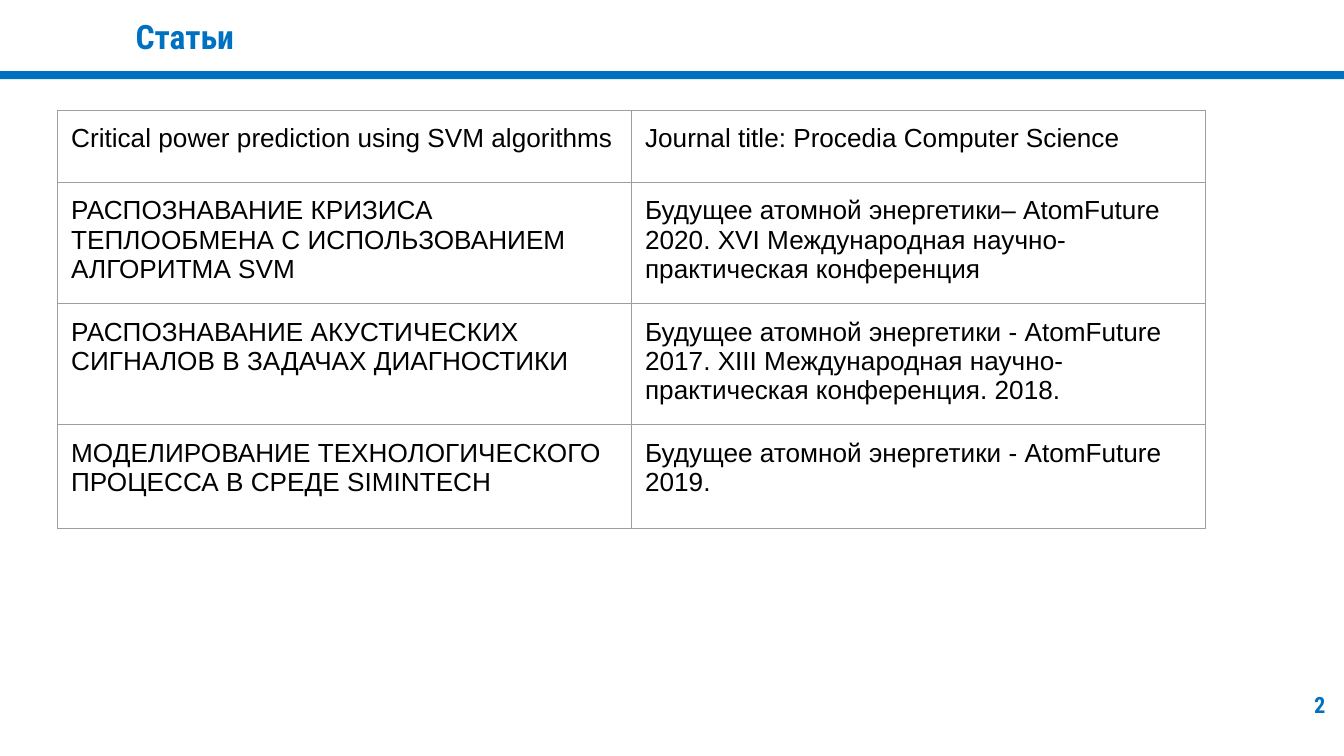
import pptx
import pptx.dml.color
import pptx.enum.shapes
import pptx.enum.text
import pptx.oxml
import pptx.oxml.ns
import pptx.util
from dataclasses import dataclass

Inches = pptx.util.Inches
Align = pptx.enum.text.PP_ALIGN
Anchor = pptx.enum.text.MSO_ANCHOR


@dataclass(frozen=True)
class Theme:
    accent: str = "0070C0"
    text: str = "000000"
    border: str = "9E9E9E"
    border_width: float = 0.75
    heading_font: str = "Roboto Condensed"
    body_font: str = "Arial"
    title_size: int = 18
    body_size: int = 14
    number_size: int = 12
    inset: float = 0.1


class SlideBuilder:
    def __init__(self, slide, theme):
        self.slide = slide
        self.theme = theme

    def add_run(self, paragraph, text, size, font, color, bold=False):
        run = paragraph.add_run()
        run.text = text
        run.font.size = pptx.util.Pt(size)
        run.font.name = font
        run.font.bold = bold
        run.font.color.rgb = pptx.dml.color.RGBColor.from_string(color)
        # The paragraph end keeps the run's size, so it does not stretch the line
        paragraph._p.append(pptx.oxml.parse_xml(
            f'<a:endParaRPr {pptx.oxml.ns.nsdecls("a")} sz="{size * 100}"/>'))

    def set_margins(self, holder):
        for side in ("left", "top", "right", "bottom"):
            setattr(holder, f"margin_{side}", Inches(self.theme.inset))

    def bar(self, left, top, width, height):
        shape = self.slide.shapes.add_shape(
            pptx.enum.shapes.MSO_SHAPE.RECTANGLE,
            Inches(left), Inches(top), Inches(width), Inches(height))
        shape.shadow.inherit = False
        shape.fill.solid()
        shape.fill.fore_color.rgb = pptx.dml.color.RGBColor.from_string(self.theme.accent)
        shape.line.fill.background()

    def heading(self, text, left, top, width, height, size, align=Align.LEFT):
        box = self.slide.shapes.add_textbox(
            Inches(left), Inches(top), Inches(width), Inches(height))
        frame = box.text_frame
        frame.word_wrap = True
        frame.vertical_anchor = Anchor.MIDDLE
        self.set_margins(frame)
        paragraph = frame.paragraphs[0]
        paragraph.alignment = align
        self.add_run(paragraph, text, size, self.theme.heading_font,
                     self.theme.accent, bold=True)

    def set_borders(self, cell):
        properties = cell._tc.get_or_add_tcPr()
        width = pptx.util.Pt(self.theme.border_width)
        # Borders must come before the fill in the cell properties
        for position, side in enumerate(("lnL", "lnR", "lnT", "lnB")):
            properties.insert(position, pptx.oxml.parse_xml(
                f'<a:{side} {pptx.oxml.ns.nsdecls("a")} w="{width}"><a:solidFill>'
                f'<a:srgbClr val="{self.theme.border}"/></a:solidFill></a:{side}>'))

    def table(self, rows, left, top, frame_size, column_widths, row_heights):
        frame = self.slide.shapes.add_table(
            len(rows), len(column_widths), Inches(left), Inches(top),
            Inches(frame_size), Inches(frame_size))
        table = frame.table
        table.first_row = False
        table.horz_banding = False
        for column, width in zip(table.columns, column_widths):
            column.width = Inches(width)
        for row, height, texts in zip(table.rows, row_heights, rows):
            row.height = Inches(height)
            for cell, text in zip(row.cells, texts):
                cell.fill.background()
                self.set_margins(cell)
                self.set_borders(cell)
                self.add_run(cell.text_frame.paragraphs[0], text, self.theme.body_size,
                             self.theme.body_font, self.theme.text)
        # Sizing rows and columns resizes the frame, so its size is set last
        frame.width = frame.height = Inches(frame_size)


ARTICLES = [
    ("Critical power prediction using SVM algorithms",
     "Journal title: Procedia Computer Science"),
    ("РАСПОЗНАВАНИЕ КРИЗИСА ТЕПЛООБМЕНА С ИСПОЛЬЗОВАНИЕМ АЛГОРИТМА SVM",
     "Будущее атомной энергетики– AtomFuture 2020. "
     "XVI Международная научно-практическая конференция"),
    ("РАСПОЗНАВАНИЕ АКУСТИЧЕСКИХ СИГНАЛОВ В ЗАДАЧАХ ДИАГНОСТИКИ",
     "Будущее атомной энергетики - AtomFuture 2017. "
     "XIII Международная научно-практическая конференция. 2018."),
    ("МОДЕЛИРОВАНИЕ ТЕХНОЛОГИЧЕСКОГО ПРОЦЕССА В СРЕДЕ SIMINTECH",
     "Будущее атомной энергетики - AtomFuture 2019."),
]


def main():
    presentation = pptx.Presentation()
    presentation.slide_width = Inches(10)
    presentation.slide_height = presentation.slide_width * 9 // 16
    slide = presentation.slides.add_slide(presentation.slide_layouts[6])
    theme = Theme()
    builder = SlideBuilder(slide, theme)

    # Header
    builder.bar(0, 0.53, 10, 0.06)
    builder.heading("Статьи", 0.91, -0.15, 5.75, 0.84, theme.title_size)

    # Slide number
    builder.heading("2", 8.33, 5.07, 1.63, 0.35, theme.number_size, Align.RIGHT)

    # Articles and where they appeared
    builder.table(ARTICLES, 0.43, 0.82, 3.28, [4.27] * 2, [0.54, 0.86, 0.86, 0.77])

    presentation.save("out.pptx")


if __name__ == "__main__":
    main()
